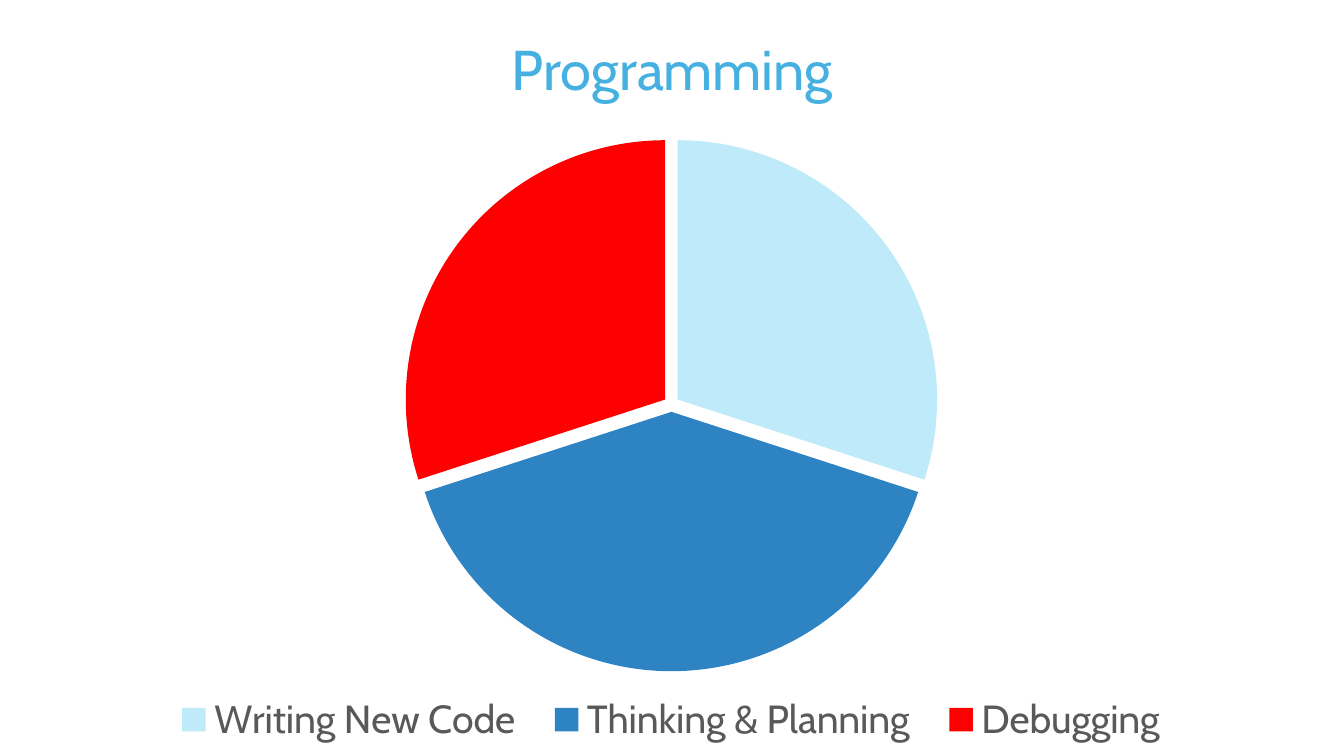
from lxml import etree
from pptx import Presentation
from pptx.chart.data import CategoryChartData
from pptx.dml.color import RGBColor
from pptx.enum.chart import XL_CHART_TYPE, XL_LEGEND_POSITION
from pptx.oxml.ns import qn
from pptx.util import Inches, Pt

PIE = XL_CHART_TYPE.PIE
BOTTOM = XL_LEGEND_POSITION.BOTTOM
FONT = "Cabin"
WIDTH, HEIGHT = 10.81, 7.5
SLICES = [
    ("Writing New Code", 30, "BFEAF9"),
    ("Thinking & Planning", 40, "2E83C3"),
    ("Debugging", 30, "FF0000"),
]


def style_font(font, size, color):
    font.name = FONT
    font.size = Pt(size)
    font.bold = False
    font.color.rgb = RGBColor.from_string(color)


def place(element, before, **lengths):
    for old in element.findall(qn("c:layout")):
        element.remove(old)
    layout = etree.Element(qn("c:layout"))
    manual = etree.SubElement(layout, qn("c:manualLayout"))
    if element.tag == qn("c:plotArea"):
        etree.SubElement(manual, qn("c:layoutTarget")).set("val", "inner")
    for axis in "xy":
        etree.SubElement(manual, qn(f"c:{axis}Mode")).set("val", "edge")
    for side, length in lengths.items():
        share = length / (WIDTH if side in "xw" else HEIGHT)
        etree.SubElement(manual, qn(f"c:{side}")).set("val", str(share))
    element.find(qn(before)).addprevious(layout)


deck = Presentation()
deck.slide_width = Inches(13.33)
deck.slide_height = Inches(HEIGHT)
page = deck.slides.add_slide(deck.slide_layouts[6])

data = CategoryChartData()
data.categories = [name for name, value, color in SLICES]
data.add_series("Series 1", [value for name, value, color in SLICES])
chart = page.shapes.add_chart(
    PIE, Inches(1.26), 0, Inches(WIDTH), Inches(HEIGHT), data
).chart
style_font(chart.font, 10, "000000")

chart.has_title = True
title = chart.chart_title
title.include_in_layout = False
title.text_frame.text = "Programming"
style_font(title.text_frame.paragraphs[0].runs[0].font, 40, "46B1E1")
place(title._element, "c:overlay", x=3.71, y=0.2)

chart.has_legend = True
chart.legend.position = BOTTOM
chart.legend.include_in_layout = False
style_font(chart.legend.font, 28, "595959")
place(chart.legend._element, "c:overlay", x=0.28, y=6.78, w=10.23, h=0.72)

plot = chart.plots[0]
plot.vary_by_categories = True
series = plot.series[0]
for index, (name, value, color) in enumerate(SLICES):
    fill = series.points[index].format.fill
    fill.solid()
    fill.fore_color.rgb = RGBColor.from_string(color)
explosion = etree.Element(qn("c:explosion"))
explosion.set("val", "3")
series._element.find(qn("c:dPt")).addprevious(explosion)
plot_area = chart._chartSpace.find(f".//{qn('c:plotArea')}")
place(plot_area, "c:pieChart", x=2.7, y=1.36, w=5.4, h=5.3)

deck.save("out.pptx")
